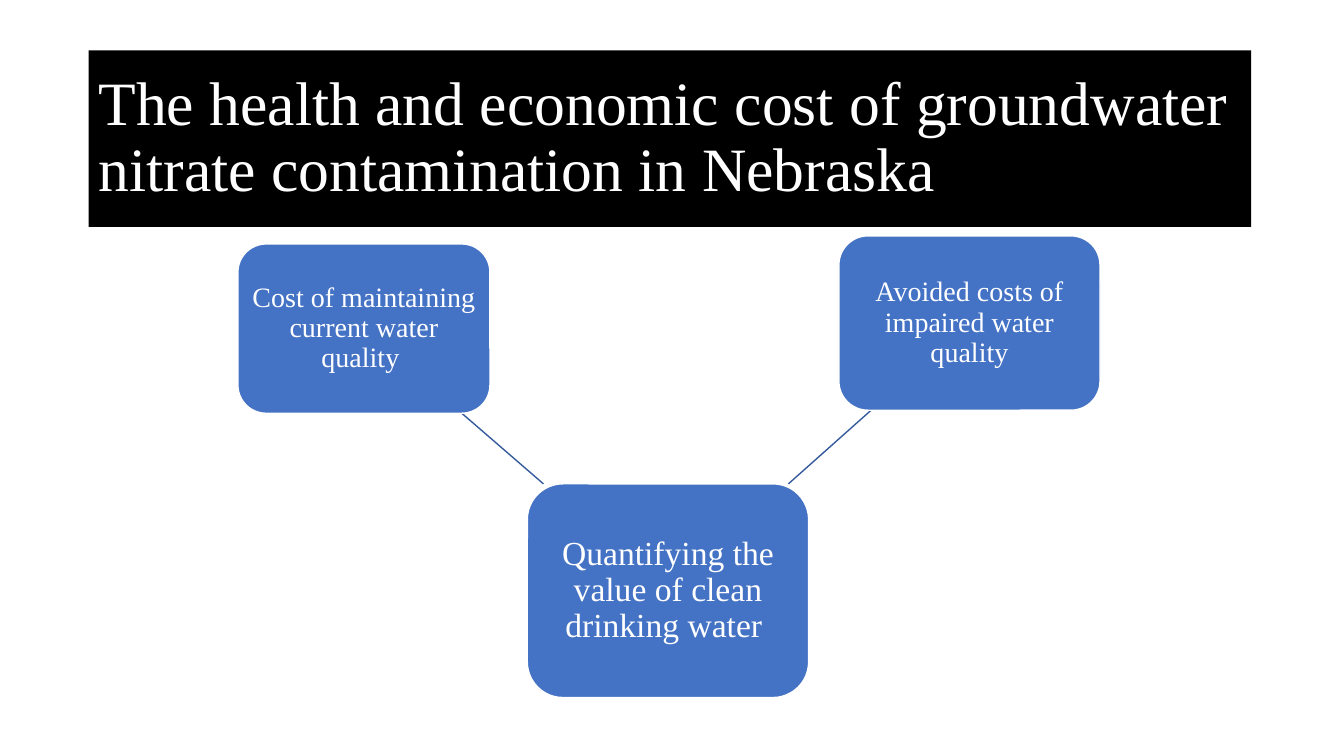
from pptx import Presentation
from pptx.dml.color import RGBColor
from pptx.enum.shapes import MSO_CONNECTOR, MSO_SHAPE
from pptx.enum.text import MSO_ANCHOR, PP_ALIGN
from pptx.oxml.ns import qn
from pptx.util import Inches, Pt
from lxml.etree import SubElement

# Content: lengths in inches
TITLE = "The health and economic cost of groundwater nitrate contamination in Nebraska"
TITLE_BOX = (0.88, 0.5, 11.53, 1.75)
# text, (left, top, width, height), type size, inset
NODES = [
    ("Quantifying the value of clean drinking water ", (5.23, 4.8, 2.79, 2.12), "goal", 0.07),
    ("Avoided costs of impaired water quality", (8.32, 2.34, 2.59, 1.73), "cost", 0.06),
    ("Cost of maintaining current water quality ", (2.36, 2.42, 2.5, 1.68), "cost", 0.06),
]
LINKS = [(7.82, 4.8, 8.64, 4.07), (5.39, 4.8, 4.58, 4.1)]


class Theme:
    font = "Times New Roman"
    sizes = {"title": Pt(44), "goal": Pt(24), "cost": Pt(20)}
    white = RGBColor(0xFF, 0xFF, 0xFF)
    black = RGBColor(0, 0, 0)
    node = RGBColor(0x44, 0x72, 0xC4)
    link = RGBColor(0x36, 0x5B, 0x9D)
    line = Pt(1)


def add_box(s, kind, box, fill, text, size, align):
    sp = s.shapes.add_shape(kind, *map(Inches, box))
    sp.shadow.inherit = False
    sp.fill.solid()
    sp.fill.fore_color.rgb = fill
    sp.line.fill.background()
    tf = sp.text_frame
    tf.word_wrap = True
    tf.vertical_anchor = MSO_ANCHOR.MIDDLE
    p = tf.paragraphs[0]
    p.text = text
    p.alignment = align
    p.line_spacing = 0.9
    p.font.name = Theme.font
    p.font.size = Theme.sizes[size]
    p.font.color.rgb = Theme.white
    return sp


prs = Presentation()
prs.slide_width, prs.slide_height = Inches(13.33), Inches(7.5)
s = prs.slides.add_slide(prs.slide_layouts[6])

# Title band
add_box(s, MSO_SHAPE.RECTANGLE, TITLE_BOX, Theme.black, TITLE, "title", PP_ALIGN.LEFT)

# Links from the goal to each cost
for ends in LINKS:
    link = s.shapes.add_connector(MSO_CONNECTOR.STRAIGHT, *map(Inches, ends))
    link.line.color.rgb = Theme.link
    link.line.width = Theme.line
    SubElement(link._element.spPr, qn("a:effectLst"))

# Goal and cost boxes
for text, box, size, inset in NODES:
    sp = add_box(s, MSO_SHAPE.ROUNDED_RECTANGLE, box, Theme.node, text, size, PP_ALIGN.CENTER)
    sp.line.color.rgb = Theme.white
    sp.line.width = Theme.line
    tf = sp.text_frame
    tf.margin_left = tf.margin_right = tf.margin_top = tf.margin_bottom = Inches(inset)

prs.save("out.pptx")
